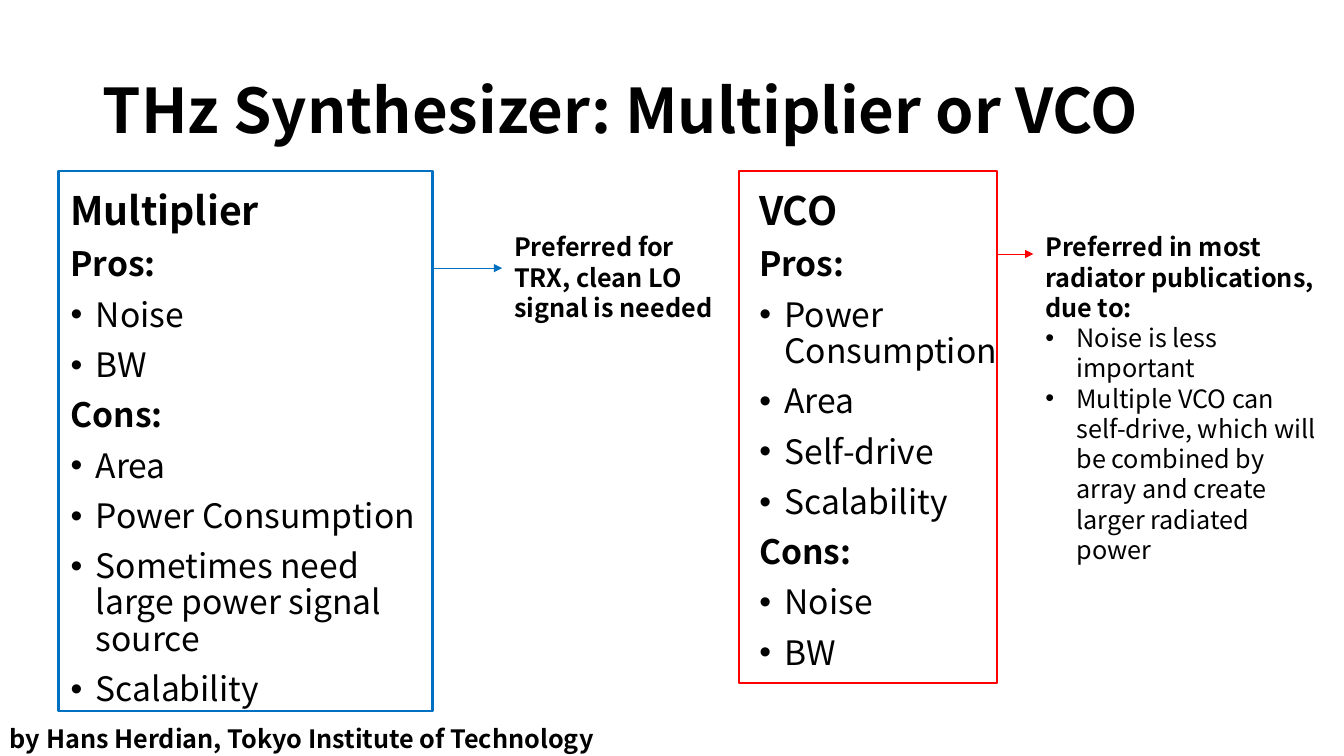
from lxml import etree
from pptx import Presentation
from pptx.dml.color import RGBColor
from pptx.enum.shapes import MSO_CONNECTOR, MSO_SHAPE
from pptx.enum.text import MSO_ANCHOR, MSO_AUTO_SIZE, PP_ALIGN
from pptx.oxml.ns import qn
from pptx.util import Inches, Pt

STRAIGHT = MSO_CONNECTOR.STRAIGHT
RECTANGLE = MSO_SHAPE.RECTANGLE
TOP, MIDDLE = MSO_ANCHOR.TOP, MSO_ANCHOR.MIDDLE
NO_FIT, GROW = MSO_AUTO_SIZE.NONE, MSO_AUTO_SIZE.SHAPE_TO_FIT_TEXT
LEFT = PP_ALIGN.LEFT

FONT = "Noto Sans CJK JP"
COLORS = {"text": "000000", "multiplier": "0070C0", "vco": "FF0000"}
TWO_CONTENT = 3
FRAME_TOP, LIST_TOP, NOTE_TOP = 22.67, 24.67, 30

# Content: (heading, points) sections for each option
MULTIPLIER = [
    ("Pros:", ["Noise", "BW"]),
    ("Cons:", ["Area", "Power Consumption",
               "Sometimes need large power signal source", "Scalability"]),
]
VCO = [
    ("Pros:", ["Power\vConsumption", "Area", "Self-drive", "Scalability"]),
    ("Cons:", ["Noise", "BW"]),
]
RADIATOR_REASONS = [
    "Noise is less important",
    "Multiple VCO can self-drive, which will be combined by array "
    "and create larger radiated power",
]


class SlideBuilder:
    """Places elements by percentages of the slide's width and height."""

    def __init__(self):
        self.deck = Presentation()
        self.deck.slide_width = Inches(13.33)
        self.deck.slide_height = Inches(7.5)
        self.slide = self.deck.slides.add_slide(self.deck.slide_layouts[TWO_CONTENT])

    def x(self, share):
        return round(self.deck.slide_width * share / 100)

    def y(self, share):
        return round(self.deck.slide_height * share / 100)

    def box(self, left, top, width, height):
        return self.x(left), self.y(top), self.x(width), self.y(height)

    def placeholder(self, index, area, anchor):
        holder = self.slide.placeholders[index]
        holder.left, holder.top, holder.width, holder.height = self.box(*area)
        frame = holder.text_frame
        frame.auto_size = NO_FIT
        frame.vertical_anchor = anchor
        return frame

    def fill_line(self, paragraph, text, size, bold=True, indent=0, line=None, before=0):
        paragraph.text = text
        paragraph.alignment = LEFT
        paragraph.line_spacing = line
        paragraph.space_before, paragraph.space_after = Pt(before), Pt(0)
        for run in paragraph.runs:
            run.font.name, run.font.size, run.font.bold = FONT, Pt(size), bold
            run.font.color.rgb = RGBColor.from_string(COLORS["text"])
        # Bullet with hanging indent, or none
        properties = paragraph._p.get_or_add_pPr()
        properties.set("marL", str(Inches(indent)))
        properties.set("indent", str(-Inches(indent)))
        if indent:
            etree.SubElement(properties, qn("a:buFont"), typeface="Arial")
            etree.SubElement(properties, qn("a:buChar"), char="•")
        else:
            etree.SubElement(properties, qn("a:buNone"))

    def title(self, text, area):
        frame = self.placeholder(0, area, MIDDLE)
        self.fill_line(frame.paragraphs[0], text, 44, line=0.9)

    def option(self, index, name, sections, area):
        frame = self.placeholder(index, area, TOP)
        spacing = {"line": 0.9, "before": 10}
        self.fill_line(frame.paragraphs[0], name, 28, **spacing)
        for heading, points in sections:
            self.fill_line(frame.add_paragraph(), heading, 24, **spacing)
            for point in points:
                self.fill_line(frame.add_paragraph(), point, 24, bold=False,
                               indent=0.25, **spacing)

    def note(self, text, area, points=(), wrap=True):
        frame = self.slide.shapes.add_textbox(*self.box(*area)).text_frame
        frame.word_wrap = wrap
        frame.auto_size = GROW
        self.fill_line(frame.paragraphs[0], text, 18)
        for point in points:
            self.fill_line(frame.add_paragraph(), point, 18, bold=False, indent=0.31)

    def outline(self, color, area):
        border = self.slide.shapes.add_shape(RECTANGLE, *self.box(*area))
        border.shadow.inherit = False
        border.fill.background()
        border.line.color.rgb = RGBColor.from_string(COLORS[color])
        border.line.width = Pt(1.5)

    def arrow(self, color, start, end, height):
        arrow = self.slide.shapes.add_connector(
            STRAIGHT, self.x(start), self.y(height), self.x(end), self.y(height))
        arrow.line.color.rgb = RGBColor.from_string(COLORS[color])
        arrow.line.width = Pt(0.5)
        outline = arrow._element.spPr.find(qn("a:ln"))
        etree.SubElement(outline, qn("a:tailEnd"), type="triangle")
        etree.SubElement(arrow._element.spPr, qn("a:effectLst"))


def main():
    page = SlideBuilder()
    page.title("THz Synthesizer: Multiplier or VCO", (6.9, 5.33, 86.27, 19.33))

    # Pros and cons of both options
    page.option(1, "Multiplier", MULTIPLIER, (4.5, LIST_TOP, 27.68, 71.33))
    page.option(2, "VCO", VCO, (55.74, LIST_TOP, 42.69, 71.33))

    # VCO frame and its use
    page.outline("vco", (54.99, FRAME_TOP, 19.2, 67.73))
    page.arrow("vco", 74.27, 76.89, 33.6)
    page.note("Preferred in most radiator publications, due to:",
              (77.04, NOTE_TOP, 21.91, 45.73), RADIATOR_REASONS)

    # Multiplier frame and its use
    page.outline("multiplier", (4.35, FRAME_TOP, 27.83, 71.33))
    page.arrow("multiplier", 32.11, 37.36, 35.47)
    page.note("Preferred for TRX, clean LO signal is needed",
              (37.51, NOTE_TOP, 17.33, 13.47))

    # Author
    page.note("by Hans Herdian, Tokyo Institute of Technology",
              (0, 95.07, 45.31, 5.33), wrap=False)
    page.deck.save("out.pptx")


if __name__ == "__main__":
    main()
